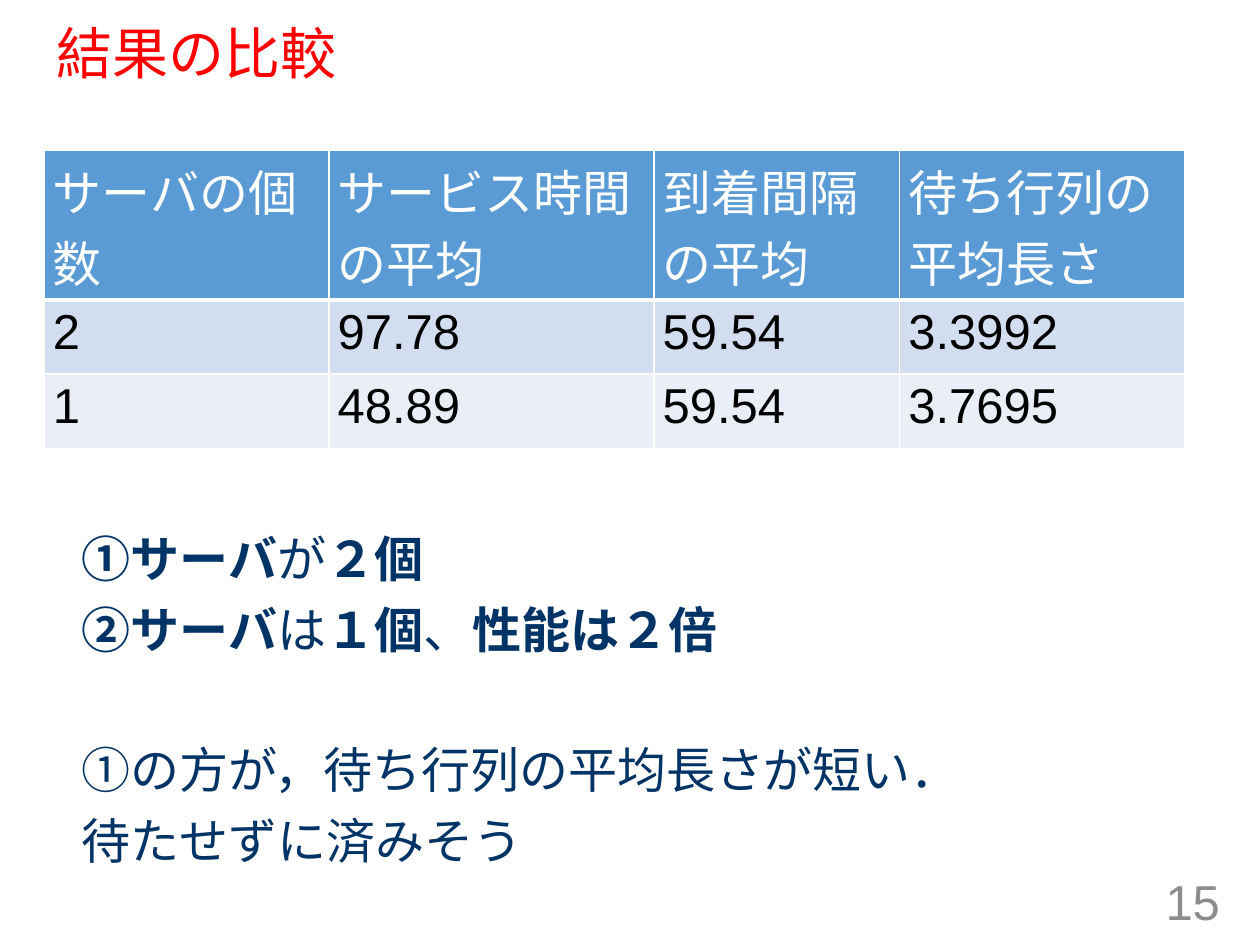
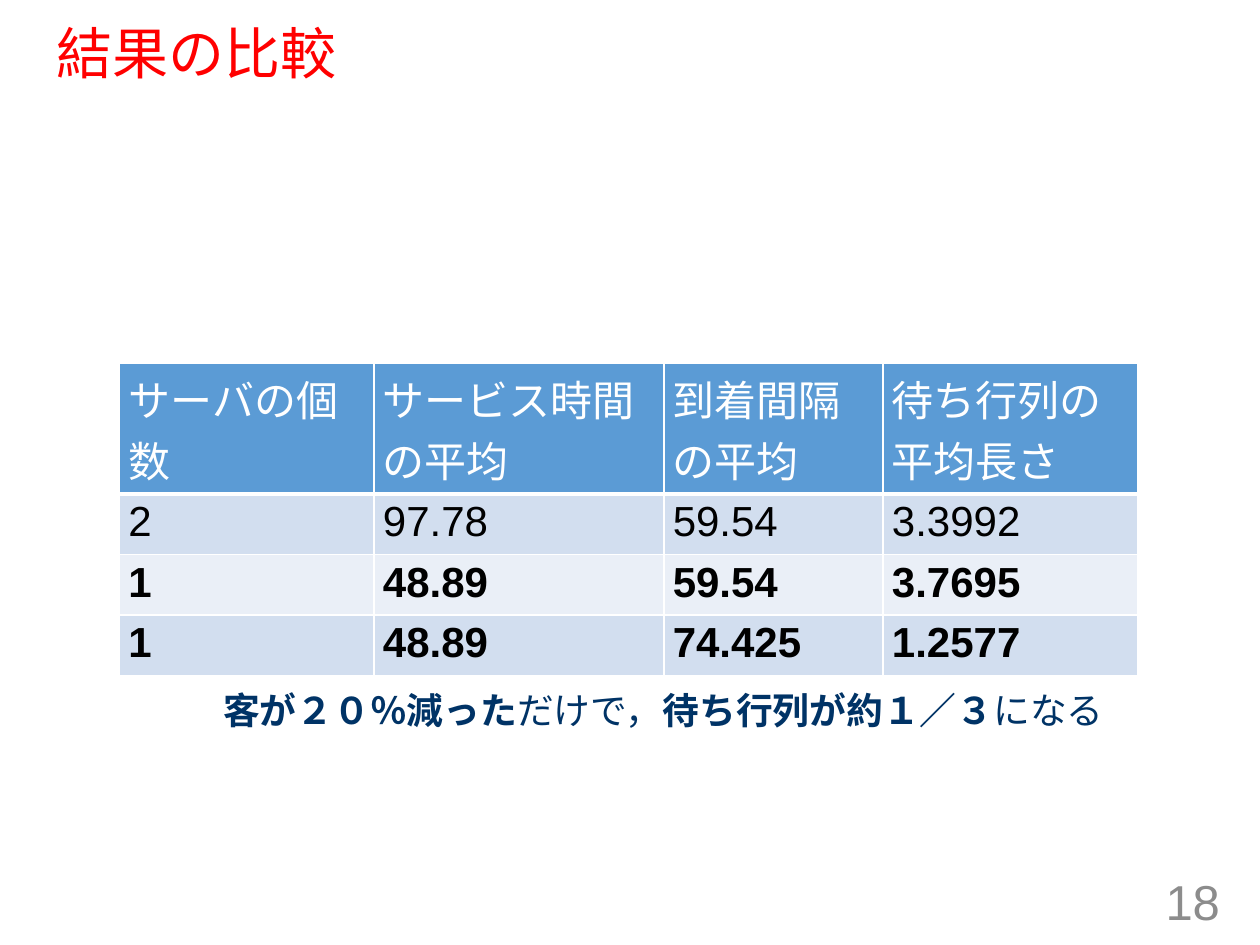
from lxml import etree
from pptx import Presentation
from pptx.dml.color import RGBColor
from pptx.enum.text import MSO_ANCHOR as ANCHOR, PP_ALIGN as ALIGN
from pptx.oxml.ns import qn
from pptx.util import Inches, Pt

RED = RGBColor(0xFF, 0x00, 0x00)
GRAY = RGBColor(0x8C, 0x8C, 0x8C)
NAVY = RGBColor(0x00, 0x33, 0x66)
WHITE = RGBColor(0xFF, 0xFF, 0xFF)
BLACK = RGBColor(0x00, 0x00, 0x00)
HEADER_BLUE = RGBColor(0x5B, 0x9B, 0xD5)
BANDS = [RGBColor(0xD2, 0xDE, 0xEF), RGBColor(0xEA, 0xEF, 0xF7)]

HEADERS = ["サーバの個数", "サービス時間の平均", "到着間隔の平均", "待ち行列の平均長さ"]
TWO_SERVERS = ["2", "97.78", "59.54", "3.3992"]
FAST_SERVER = ["1", "48.89", "59.54", "3.7695"]
FEWER_CUSTOMERS = ["1", "48.89", "74.425", "1.2577"]

# Each remark paragraph is (space before, runs); each run is (text, bold)
PAGES = [
    {
        "number": "15", "at": (0.35, 1.19), "size": 28,
        "columns": [2.26, 2.58, 1.95, 2.26], "heights": [1.19, 0.59, 0.59],
        "rows": [HEADERS, TWO_SERVERS, FAST_SERVER], "bold_rows": [],
        "remark_at": (0.58, 4.21), "remark_size": 28,
        "remarks": [
            (0, [("①サーバ", True), ("が", False), ("２個", True)]),
            (10, [("②サーバ", True), ("は", False), ("１個", True),
                  ("、", False), ("性能は２倍", True)]),
            (50, [("①の方が，待ち行列の平均長さが短い．", False)]),
            (10, [("待たせずに済みそう", False)]),
        ],
    },
    {
        "number": "18", "at": (0.95, 2.88), "size": 24,
        "columns": [2.02, 2.3, 1.74, 2.02], "heights": [1.04, 0.47, 0.47, 0.47],
        "rows": [HEADERS, TWO_SERVERS, FAST_SERVER, FEWER_CUSTOMERS], "bold_rows": [2, 3],
        "remark_at": (1.7, 5.46), "remark_size": 21,
        "remarks": [
            (0, [("客が２０％減った", True), ("だけで，", False),
                 ("待ち行列が約１／３", True), ("になる", False)]),
        ],
    },
]


def add_run(paragraph, text, size, color, bold=False):
    run = paragraph.add_run()
    run.text = text
    for name, value in {"name": "Arial", "size": Pt(size), "bold": bold}.items():
        setattr(run.font, name, value)
    run.font.color.rgb = color


def add_frame(slide, left, top, width, height, anchor):
    """Add a wrapping text box and return its text frame."""
    frame = slide.shapes.add_textbox(*map(Inches, (left, top, width, height))).text_frame
    margins = {"margin_left": 0.07, "margin_right": 0.07, "margin_top": 0.04, "margin_bottom": 0.04}
    if anchor == ANCHOR.MIDDLE:
        margins.update(margin_left=0.1, margin_right=0.1, margin_top=0.05, margin_bottom=0.05)
    for name, value in margins.items():
        setattr(frame, name, Inches(value))
    frame.word_wrap = True
    frame.vertical_anchor = anchor
    return frame


deck = Presentation()
deck.slide_width, deck.slide_height = Inches(10), Inches(7.5)

for page in PAGES:
    slide = deck.slides.add_slide(deck.slide_layouts[6])

    title = add_frame(slide, 0.35, 0.19, 9.25, 0.51, ANCHOR.MIDDLE).paragraphs[0]
    title.line_spacing = 0.9
    add_run(title, "結果の比較", 32, RED)

    page_number = add_frame(slide, 7.53, 6.95, 2.25, 0.4, ANCHOR.MIDDLE).paragraphs[0]
    page_number.alignment = ALIGN.RIGHT
    add_run(page_number, page["number"], 28, GRAY)

    left, top = page["at"]
    results = slide.shapes.add_table(
        len(page["rows"]), len(HEADERS), Inches(left), Inches(top),
        Inches(sum(page["columns"])), Inches(sum(page["heights"]))).table
    for column, width in zip(results.columns, page["columns"]):
        column.width = Inches(width)
    for row, height in zip(results.rows, page["heights"]):
        row.height = Inches(height)

    for r, values in enumerate(page["rows"]):
        for c, value in enumerate(values):
            cell = results.cell(r, c)
            cell.margin_left = cell.margin_right = Inches(0.07)
            cell.margin_top = cell.margin_bottom = Inches(0.04)
            add_run(cell.text_frame.paragraphs[0], value, page["size"],
                    BLACK if r else WHITE, r in page["bold_rows"])
            properties = cell._tc.get_or_add_tcPr()
            for side in ("lnL", "lnR", "lnT", "lnB"):
                under_header = r == 0 and side == "lnB"
                border = etree.SubElement(properties, qn(f"a:{side}"),
                                          w=str(Pt(3 if under_header else 1)))
                fill = etree.SubElement(border, qn("a:solidFill"))
                etree.SubElement(fill, qn("a:srgbClr"), val=str(WHITE))
            cell.fill.solid()
            cell.fill.fore_color.rgb = BANDS[(r - 1) % 2] if r else HEADER_BLUE

    remark = add_frame(slide, *page["remark_at"], 7.32, 1.05, ANCHOR.TOP)
    for i, (space, runs) in enumerate(page["remarks"]):
        paragraph = remark.add_paragraph() if i else remark.paragraphs[0]
        paragraph.line_spacing = 0.9
        paragraph.space_before = Pt(space)
        for text, bold in runs:
            add_run(paragraph, text, page["remark_size"], NAVY, bold)

deck.save("out.pptx")
